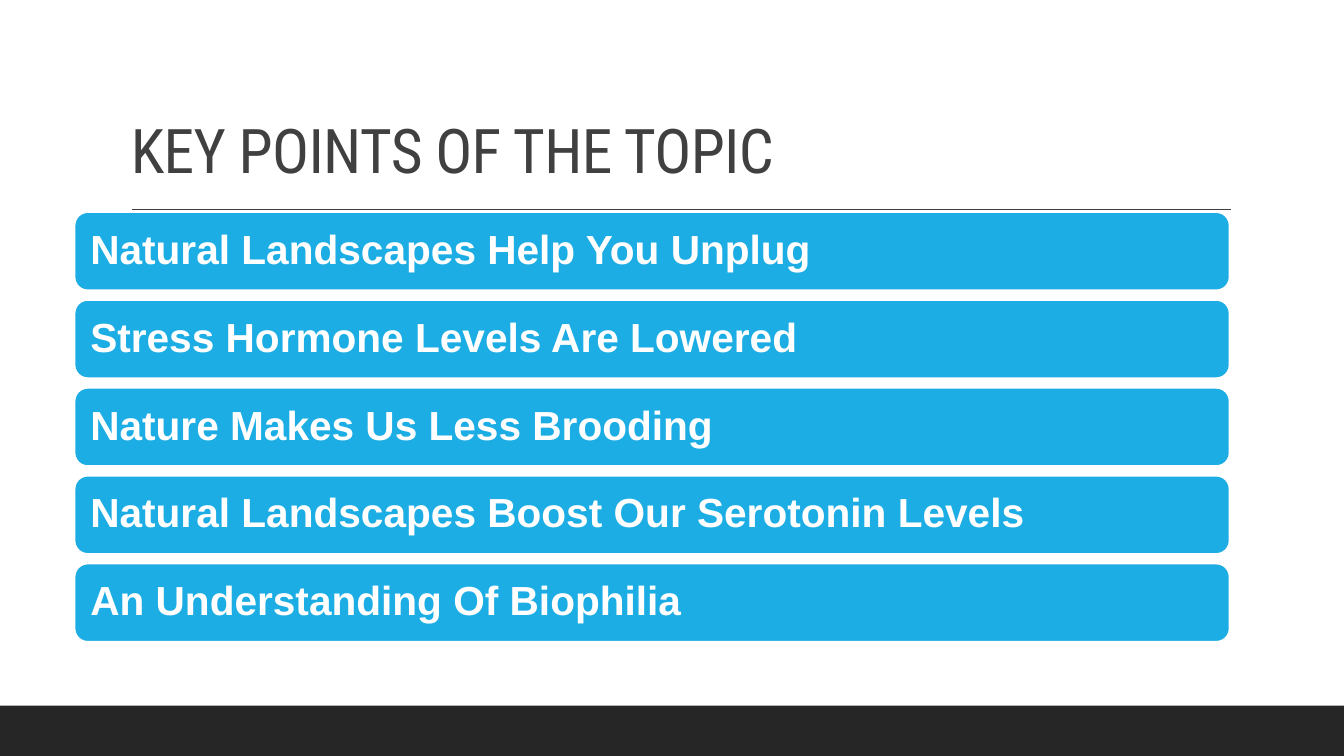
from pptx import Presentation
from pptx.dml.color import RGBColor
from pptx.enum.shapes import MSO_CONNECTOR, MSO_SHAPE
from pptx.enum.text import MSO_ANCHOR, PP_ALIGN
from pptx.oxml.ns import qn
from pptx.util import Pt
from lxml import etree

RECT, ROUND = MSO_SHAPE.RECTANGLE, MSO_SHAPE.ROUNDED_RECTANGLE
LINE = MSO_CONNECTOR.STRAIGHT
MIDDLE, BOTTOM = MSO_ANCHOR.MIDDLE, MSO_ANCHOR.BOTTOM
LEFT = PP_ALIGN.LEFT

WIDE, HIGH = 960, 540
DARK, GREY, BLUE, WHITE = "262626", "404040", "1CADE4", "FFFFFF"
TITLE = {"name": "Roboto Condensed", "size": Pt(44), "bold": False}
LABEL = {"name": "Arial", "size": Pt(29), "bold": True}
POINTS = [
    "Natural Landscapes Help You Unplug",
    "Stress Hormone Levels Are Lowered",
    "Nature Makes Us Less Brooding",
    "Natural Landscapes Boost Our Serotonin Levels",
    "An Understanding Of Biophilia",
]


def color(code):
    return RGBColor.from_string(code)


def write(shape, text, style, code, anchor, pad):
    """Set one left-aligned line of text in a shape; pad is (side, top)."""
    frame = shape.text_frame
    side, top = map(Pt, pad)
    layout = {"word_wrap": True, "vertical_anchor": anchor,
              "margin_left": side, "margin_right": side,
              "margin_top": top, "margin_bottom": top}
    for key, value in layout.items():
        setattr(frame, key, value)
    par = frame.paragraphs[0]
    par.alignment, par.line_spacing = LEFT, 0.9
    run = par.add_run()
    run.text = text
    for key, value in style.items():
        setattr(run.font, key, value)
    run.font.color.rgb = color(code)
    return run


def block(slide, kind, box, fill):
    shape = slide.shapes.add_shape(kind, *map(Pt, box))
    shape.shadow.inherit = False
    shape.fill.solid()
    shape.fill.fore_color.rgb = color(fill)
    shape.line.fill.background()
    return shape


def footer(slide, box):
    block(slide, RECT, box, DARK)


def header(slide, box):
    left, top, width, height = box
    # Rule below the title
    x, y = left + 7.9, top + height + 13
    rule = slide.shapes.add_connector(
        LINE, Pt(x), Pt(y), Pt(x + 784.8), Pt(y))
    rule.line.color.rgb = color(GREY)
    rule.line.width = Pt(1)
    etree.SubElement(rule._element.spPr, qn("a:effectLst"))
    # Title
    title = slide.shapes.add_textbox(*map(Pt, box))
    run = write(title, "KEY POINTS OF THE TOPIC", TITLE, GREY, BOTTOM,
                (7.2, 3.6))
    run.font._element.set("spc", "-50")


def bars(slide, box, gap):
    left, top, width, height = box
    tall = (height - gap * (len(POINTS) - 1)) / len(POINTS)
    for row, text in enumerate(POINTS):
        spot = (left, top + row * (tall + gap), width, tall)
        bar = block(slide, ROUND, spot, BLUE)
        bar.line.color.rgb = color(WHITE)
        bar.line.width = Pt(1.25)
        write(bar, text, LABEL, WHITE, MIDDLE, (8.5, 8.5))


def main():
    deck = Presentation()
    deck.slide_width, deck.slide_height = Pt(WIDE), Pt(HIGH)
    slide = deck.slides.add_slide(deck.slide_layouts[6])
    footer(slide, (0, HIGH - 36, WIDE, 36))
    header(slide, (86.4, 22.3, 792, 114.5))
    bars(slide, (53.3, 151.5, 825, 306.9), 6.9)
    deck.save("out.pptx")


if __name__ == "__main__":
    main()
